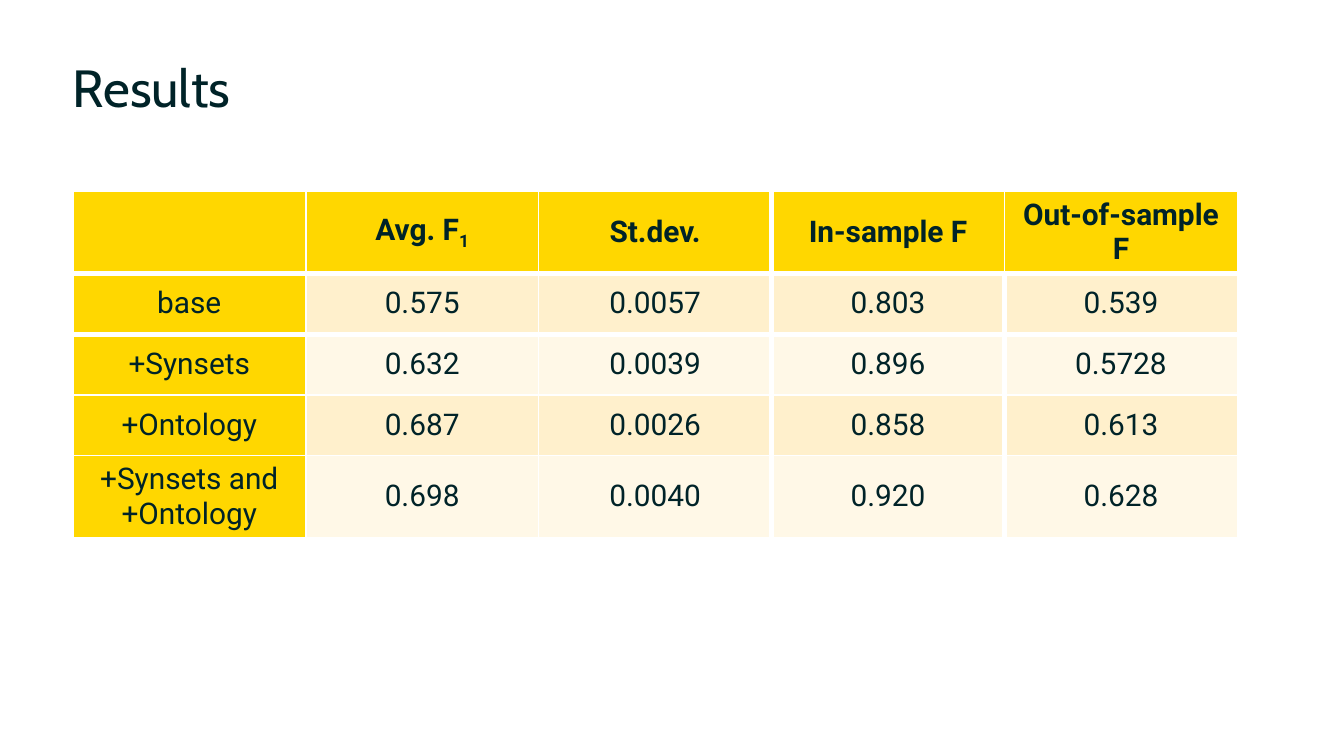
from lxml import etree
from pptx import Presentation
from pptx.dml.color import RGBColor
from pptx.enum import text
from pptx.oxml.ns import qn
from pptx.util import Pt

TITLE = "Results"
ROWS = [
    ["", "Avg. F", "St.dev.", "In-sample F", "Out-of-sample F"],
    ["base", "0.575", "0.0057", "0.803", "0.539"],
    ["+Synsets", "0.632", "0.0039", "0.896", "0.5728"],
    ["+Ontology", "0.687", "0.0026", "0.858", "0.613"],
    ["+Synsets and\v+Ontology", "0.698", "0.0040", "0.920", "0.628"],
]
HIGH = [42, 32.5, 32.5, 32.5, 42]
WIDE = 124.8
INK, GOLD, WHITE = "002328", "FFD700", "FFFFFF"
BANDS = ["FFF8E7", "FFF0CC"]


def color(code):
    return RGBColor.from_string(code)


def style(para, name, size, bold=False):
    font = para.font
    font.name, font.size, font.bold = name, Pt(size), bold
    font.color.rgb = color(INK)


def edge(cell, side, width):
    line = etree.SubElement(cell._tc.get_or_add_tcPr(), qn("a:" + side), w=str(Pt(width)))
    fill = etree.SubElement(line, qn("a:solidFill"))
    etree.SubElement(fill, qn("a:srgbClr"), val=WHITE)


def thick(row, col):
    """Widths of the rules left, right, above and below a cell."""
    body = row > 0
    wide = {
        "lnL": col == 3 or (body and col == 4),
        "lnR": col == 2 or (body and col == 3),
        "lnT": row in (1, 2),
        "lnB": row in (0, 1),
    }
    return {side: 3 if on else 1 for side, on in wide.items()}


deck = Presentation()
deck.slide_width, deck.slide_height = Pt(720), Pt(405)
slide = deck.slides.add_slide(deck.slide_layouts[6])

# Title
box = slide.shapes.add_textbox(Pt(39), Pt(31), Pt(644), Pt(45))
frame = box.text_frame
frame.word_wrap = True
frame.margin_left = frame.margin_right = frame.margin_top = frame.margin_bottom = 0
head = frame.paragraphs[0]
head.text = TITLE
head.line_spacing = Pt(32)
style(head, "Cabin", 28)

# Table grid
count = len(ROWS[0])
table = slide.shapes.add_table(
    len(ROWS), count, Pt(39), Pt(102.3), Pt(WIDE * count), Pt(sum(HIGH))).table
for col in table.columns:
    col.width = Pt(WIDE)
for row, high in zip(table.rows, HIGH):
    row.height = Pt(high)

# Cells
for r, words in enumerate(ROWS):
    for c, word in enumerate(words):
        cell = table.cell(r, c)
        cell.vertical_anchor = text.MSO_ANCHOR.MIDDLE
        cell.margin_left = cell.margin_right = Pt(9.4)
        cell.margin_top = cell.margin_bottom = Pt(2.9)
        for side, width in thick(r, c).items():
            edge(cell, side, width)
        cell.fill.solid()
        cell.fill.fore_color.rgb = color(GOLD if r == 0 or c == 0 else BANDS[r % 2])
        cell.text = word
        para = cell.text_frame.paragraphs[0]
        para.alignment = text.PP_ALIGN.CENTER
        style(para, "Roboto", 16, r == 0)

# Subscript in the score heading
sub = table.cell(0, 1).text_frame.paragraphs[0].add_run()
sub.text = "1"
sub.font._element.set("baseline", "-25000")

deck.save("out.pptx")
